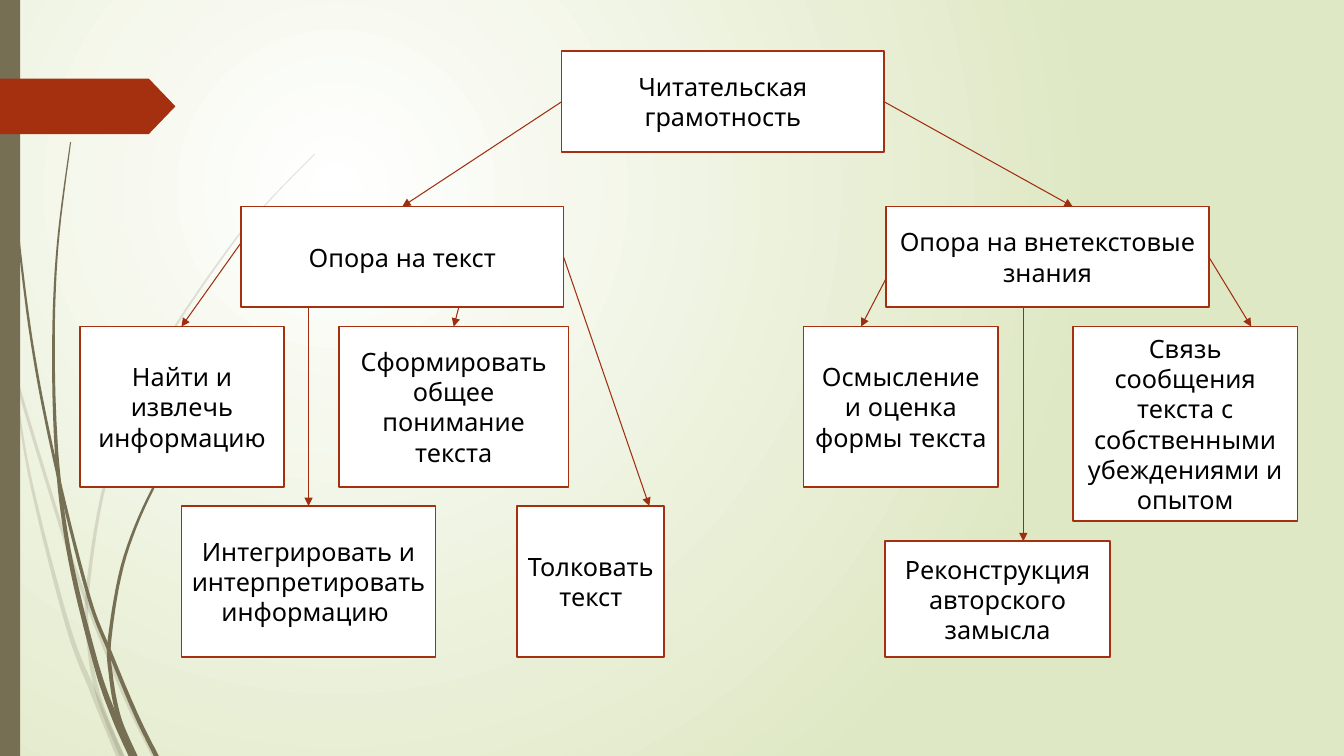
"""Builds a slide with a tree of reading literacy skills."""
from lxml.etree import SubElement
from pptx import Presentation
from pptx.dml.color import RGBColor as Rgb
from pptx.enum.shapes import MSO_CONNECTOR as Link, MSO_SHAPE as Kind
from pptx.enum.text import MSO_ANCHOR as Anchor, PP_ALIGN as Align
from pptx.oxml.ns import qn
from pptx.util import Inches, Pt

COLORS = {
    "paper": "FFFFFF", "lime": "DFE8C4", "olive": "766F54",
    "rust": "A53010", "arrow": "9E2E0F", "ink": "000000",
}
FONT = "Quicksand"
WIDE, HIGH = 13.33, 7.5
UNITS = 1000

BOXES = {
    "root": ("Читательская грамотность", 5.57, 0.51, 3.2, 1),
    "text": ("Опора на текст", 2.39, 2.05, 3.2, 1),
    "known": ("Опора на внетекстовые знания", 8.79, 2.05, 3.2, 1),
    "find": ("Найти и извлечь информацию", 0.79, 3.24, 2.03, 1.59),
    "merge": ("Интегрировать и интерпретировать информацию ", 1.8, 5.02, 2.52, 1.5),
    "grasp": ("Сформировать общее понимание текста", 3.36, 3.24, 2.28, 1.59),
    "explain": ("Толковать текст", 5.13, 5.02, 1.46, 1.5),
    "judge": ("Осмысление и оценка формы текста", 7.97, 3.24, 1.93, 1.59),
    "relate": ("Связь сообщения текста с собственными убеждениями и опытом",
               10.64, 3.24, 2.23, 1.93),
    "rebuild": ("Реконструкция авторского замысла", 8.78, 5.37, 2.23, 1.15),
}

ARROWS = [
    ("root", 0, 0.5, "text", 1.6), ("root", 3.2, 0.5, "known", 1.85),
    ("text", 0, 0.36, "find", 1.01), ("text", 0.67, 1, "merge", 1.26),
    ("text", 2.16, 1, "grasp", 1.14), ("text", 3.2, 0.5, "explain", 1.31),
    ("known", 0, 0.71, "judge", 0.57), ("known", 1.36, 1, "rebuild", 1.37),
    ("known", 3.2, 0.5, "relate", 1.77),
]

STALKS = [
    (20, 0.02, 0.05, [(0, 2.9), (0.1, 3.47), (0.16, 3.76), (0.6, 5.21),
                      (0.86, 5.97), (1.25, 6.93), (1.53, 7.5)]),
    (20, 0.01, 0.08, [(0.11, 3.5), (0.29, 4.7), (0.67, 6.2),
                      (0.93, 6.88), (1.19, 7.5)]),
    (20, 0.01, 0.05, [(3.12, 1.53), (2.68, 1.98), (2.28, 2.45), (1.59, 3.49),
                      (1.09, 4.62), (0.87, 5.84), (0.89, 6.46),
                      (0.99, 6.95), (1.21, 7.5)]),
    (100, 0.01, 0.05, [(0.03, 0), (0.07, 1.1), (0.18, 2.33), (0.34, 3.55),
                       (0.58, 4.74), (0.88, 5.92), (1.09, 6.47),
                       (1.34, 7.07), (1.55, 7.5)]),
    (100, 0.01, 0.07, [(0.7, 1.41), (0.57, 2.45), (0.53, 3.49), (0.57, 4.6),
                       (0.7, 5.56), (0.95, 6.58), (1.13, 7.1), (1.31, 7.5)]),
    (100, 0.01, 0.05, [(2.6, 3.44), (2.31, 3.74), (2.05, 4.06), (1.57, 4.75),
                       (1.24, 5.52), (1.09, 6.32), (1.1, 6.7),
                       (1.18, 7.12), (1.34, 7.5)]),
]


def tint(name):
    return Rgb.from_string(COLORS[name])


def paint(shape, fill, line=None, width=1.25):
    shape.shadow.inherit = False
    shape.fill.solid()
    shape.fill.fore_color.rgb = tint(fill)
    if line:
        shape.line.color.rgb = tint(line)
        shape.line.width = Pt(width)
    else:
        shape.line.fill.background()


def block(slide, kind, area, **style):
    shape = slide.shapes.add_shape(kind, *map(Inches, area))
    paint(shape, **style)
    return shape


def write(shape, text, size=18, color="ink", align=Align.CENTER):
    frame = shape.text_frame
    frame.word_wrap = True
    frame.vertical_anchor = Anchor.MIDDLE
    para = frame.paragraphs[0]
    para.alignment = align
    run = para.add_run()
    run.text = text
    run.font.name = FONT
    run.font.size = Pt(size)
    run.font.color.rgb = tint(color)


def smooth(knots, steps=8):
    ends = [knots[0], *knots, knots[-1]]
    path = []
    for a, b, c, d in zip(ends, ends[1:], ends[2:], ends[3:]):
        for step in range(steps):
            t = step / steps
            path.append(tuple(
                q + t * (r - p) / 2 + t * t * (2 * p - 5 * q + 4 * r - s) / 2
                + t ** 3 * (3 * q - p - 3 * r + s) / 2
                for p, q, r, s in zip(a, b, c, d)))
    return path + [knots[-1]]


def grow(slide, alpha, thin, thick, knots):
    path = smooth(knots)
    half = [(thin + (thick - thin) * i / (len(path) - 1)) / 2
            for i in range(len(path))]
    left = [(x - w, y) for (x, y), w in zip(path, half)]
    right = [(x + w, y) for (x, y), w in zip(path, half)]
    edge = [(round(x * UNITS), round(y * UNITS)) for x, y in left + right[::-1]]
    form = slide.shapes.build_freeform(*edge[0], scale=Inches(1) / UNITS)
    form.add_line_segments(edge[1:], close=True)
    shape = form.convert_to_shape()
    paint(shape, "olive")
    if alpha < 100:
        color = shape.fill._xPr.find(".//" + qn("a:srgbClr"))
        SubElement(color, qn("a:alpha"), val=str(alpha * 1000))


def join(slide, start, dx, dy, end, tx):
    x, y = BOXES[start][1:3]
    left, top = BOXES[end][1:3]
    spots = (x + dx, y + dy, left + tx, top)
    link = slide.shapes.add_connector(Link.STRAIGHT, *map(Inches, spots))
    link.line.color.rgb = tint("arrow")
    link.line.width = Pt(0.75)
    SubElement(link.line._get_or_add_ln(), qn("a:tailEnd"), type="triangle")
    SubElement(link._element.spPr, qn("a:effectLst"))


def glow(slide):
    fill = slide.background.fill
    fill.gradient()
    for stop, name in zip(fill.gradient_stops, ("paper", "lime")):
        stop.color.rgb = tint(name)
    grad = slide._element.find(".//" + qn("a:gradFill"))
    grad.remove(grad.find(qn("a:lin")))
    path = SubElement(grad, qn("a:path"), path="circle")
    SubElement(path, qn("a:fillToRect"),
               l="50000", t="50000", r="100000", b="100000")


def main():
    deck = Presentation()
    deck.slide_width, deck.slide_height = Inches(WIDE), Inches(HIGH)
    slide = deck.slides.add_slide(deck.slide_layouts[6])
    glow(slide)
    for stalk in STALKS:
        grow(slide, *stalk)
    block(slide, Kind.RECTANGLE, (0, 0, 0.2, HIGH), fill="olive")
    tag = block(slide, Kind.PENTAGON, (0, 0.78, 1.74, 0.55), fill="rust")
    tag.adjustments[0] = 0.48
    for text, *area in BOXES.values():
        box = block(slide, Kind.RECTANGLE, area, fill="paper", line="rust")
        write(box, text)
    for arrow in ARROWS:
        join(slide, *arrow)
    deck.save("out.pptx")


if __name__ == "__main__":
    main()
